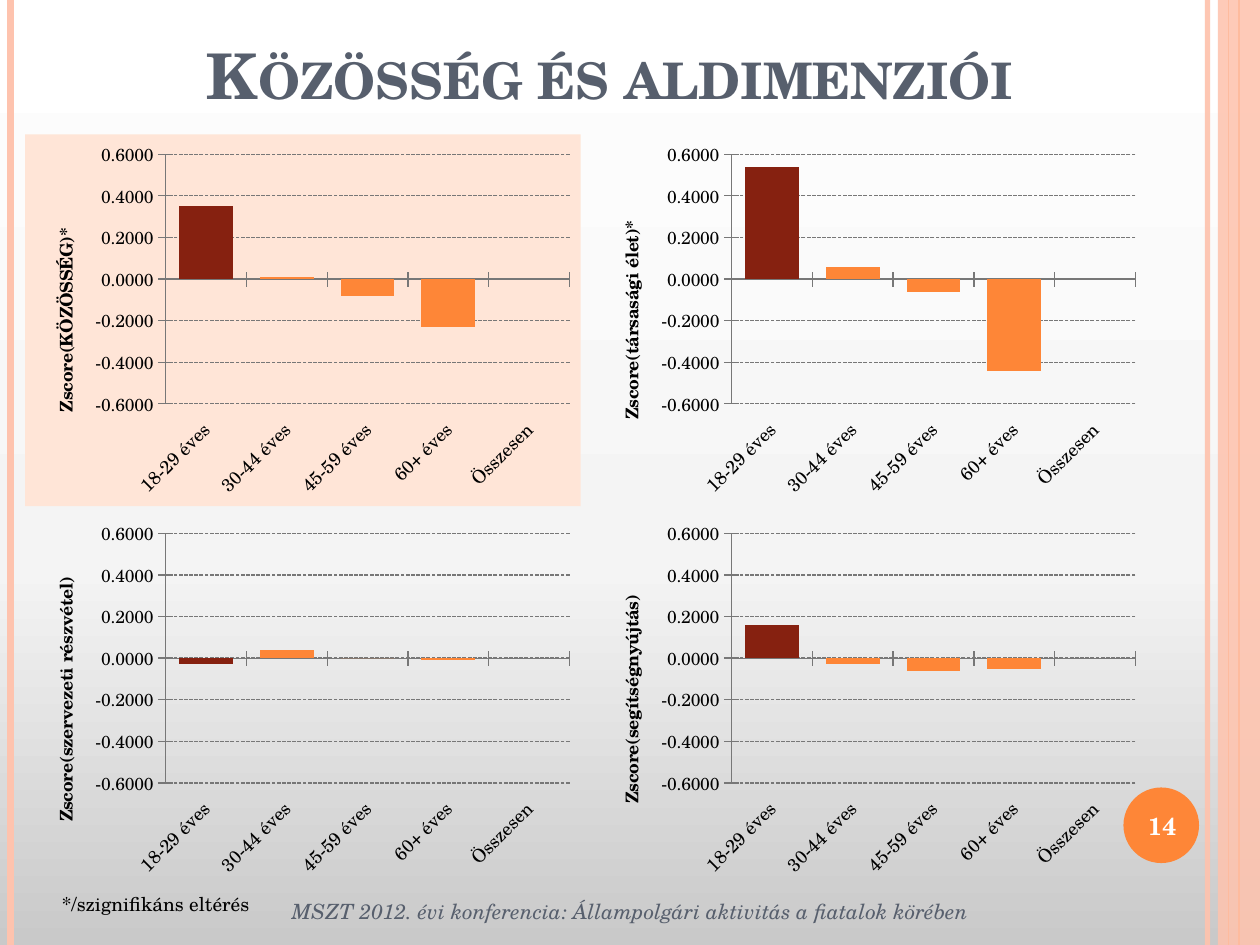
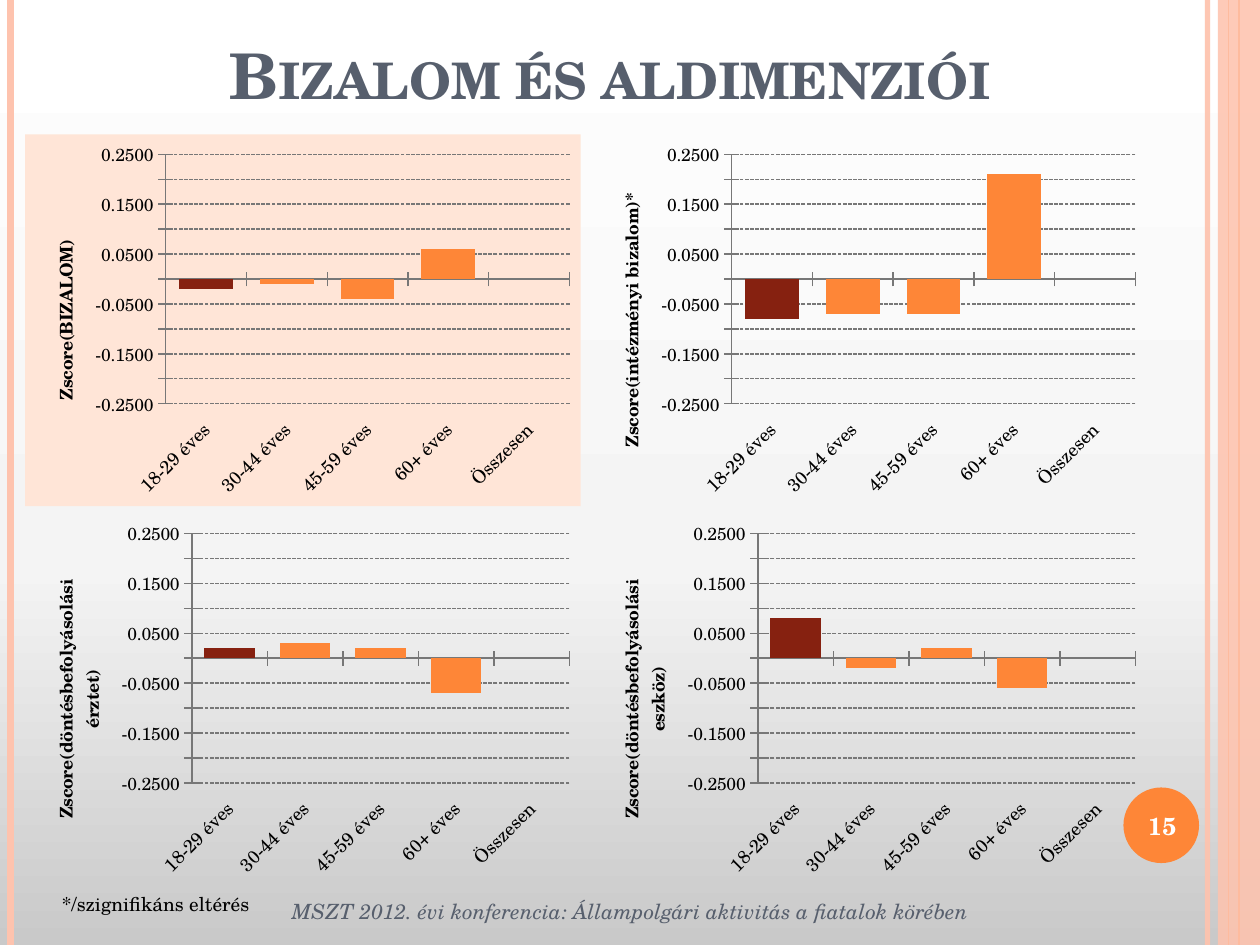
from copy import deepcopy
from dataclasses import dataclass
from itertools import product

from lxml import etree
from pptx import Presentation
from pptx import util as u
from pptx.chart.data import CategoryChartData
from pptx.dml.color import RGBColor
from pptx.enum import chart as charts
from pptx.enum import dml, shapes, text
from pptx.oxml import parse_xml
from pptx.oxml.ns import nsdecls, qn

COLORS = {
    "orange": "FE8637",
    "peach": "FEC3AE",
    "panel": "FFE5D7",
    "dark_red": "862110",
    "slate": "575F6D",
    "grid": "777777",
    "black": "000000",
    "white": "FFFFFF",
}
BACKGROUND = ((0, "C9C9C9"), (0.4, "F4F4F4"), (1, "FFFFFF"))
FONT = "TeX Gyre Schola"
COLUMNS, ROWS = 120, 90
WIDTH, HEIGHT = u.Inches(10), u.Inches(7.5)
AGES = ("18-29 éves", "30-44 éves", "45-59 éves", "60+ éves", "Összesen")
FOOTER = "MSZT 2012. évi konferencia: Állampolgári aktivitás a fiatalok körében"
FOOTNOTE = "*/szignifikáns eltérés"


@dataclass(frozen=True)
class Box:
    column: float
    row: float
    columns: float
    rows: float

    def lengths(self) -> tuple[int, int, int, int]:
        return (
            across(self.column),
            down(self.row),
            across(self.columns),
            down(self.rows),
        )


@dataclass(frozen=True)
class Stripe:
    column: float
    color: str
    points: float
    opacity: int = 100


@dataclass(frozen=True)
class ScoreChart:
    label: str
    values: tuple[float, ...]


@dataclass(frozen=True)
class Topic:
    number: int
    title: str
    limit: float
    step: float
    scores: tuple[ScoreChart, ...]


STRIPES = (
    Stripe(115, "peach", 3, 93),
    Stripe(1, "peach", 4.5),
    Stripe(118, "orange", 1.5),
    Stripe(117, "orange", 0.75),
)
SIDE_BAND = Box(116, 0, 4, ROWS)
BADGE = Box(107, 75, 7.2, 7.2)
BADGE_TEXT = Box(106.7, 75.2, 8, 6.8)
FOOTER_BOX = Box(16, 84.4, 88, 4.7)
FOOTNOTE_BOX = Box(4.7, 84.4, 20.5, 3.5)
TITLE_BOX = Box(13.1, 2.8, 90, 8.5)
FIRST_CHART = Box(2.4, 12.8, 52.9, 35.4)
CHART_STEP = (53.9, 36.1)

TOPICS = (
    Topic(14, "Közösség és aldimenziói", 0.6, 0.2, (
        ScoreChart("Zscore(KÖZÖSSÉG)*", (0.35, 0.01, -0.08, -0.23)),
        ScoreChart("Zscore(társasági élet)*", (0.54, 0.06, -0.06, -0.44)),
        ScoreChart("Zscore(szervezeti részvétel)", (-0.03, 0.04, 0, -0.01)),
        ScoreChart("Zscore(segítségnyújtás)", (0.16, -0.03, -0.06, -0.05)),
    )),
    Topic(15, "Bizalom és aldimenziói", 0.25, 0.05, (
        ScoreChart("Zscore(BIZALOM)", (-0.02, -0.01, -0.04, 0.06)),
        ScoreChart("Zscore(intézményi bizalom)*", (-0.08, -0.07, -0.07, 0.21)),
        ScoreChart("Zscore(döntésbefolyásolási érztet)", (0.02, 0.03, 0.02, -0.07)),
        ScoreChart("Zscore(döntésbefolyásolási eszköz)", (0.08, -0.02, 0.02, -0.06)),
    )),
)


def across(columns: float) -> int:
    return round(WIDTH * columns / COLUMNS)


def down(rows: float) -> int:
    return round(HEIGHT * rows / ROWS)


def rgb(name: str) -> RGBColor:
    return RGBColor.from_string(COLORS[name])


def set_opacity(element, percent: int) -> None:
    color = element.find(".//" + qn("a:srgbClr"))
    etree.SubElement(color, qn("a:alpha"), val=str(percent * 1000))


def format_font(font, size: float, color: str, bold=False, italic=False) -> None:
    font.name = FONT
    font.size = u.Pt(size)
    font.bold = bold
    font.italic = italic
    font.color.rgb = rgb(color)


def write_text(frame, content: str, *, size: float, color: str, bold=False,
               italic=False, small_caps=False, align=text.PP_ALIGN.CENTER,
               anchor=text.MSO_ANCHOR.MIDDLE, wrap=True,
               fit=text.MSO_AUTO_SIZE.NONE) -> None:
    frame.word_wrap = wrap
    frame.auto_size = fit
    frame.vertical_anchor = anchor
    paragraph = frame.paragraphs[0]
    paragraph.alignment = align
    run = paragraph.add_run()
    run.text = content
    format_font(run.font, size, color, bold, italic)
    if small_caps:
        run.font._element.set("cap", "small")


def add_text(slide, box: Box, content: str, **style) -> None:
    write_text(slide.shapes.add_textbox(*box.lengths()).text_frame, content, **style)


def paint_background(master) -> None:
    fill = master.background.fill
    fill.gradient()
    fill.gradient_angle = 90
    stops = master.element.find(".//" + qn("a:gsLst"))
    stops.append(deepcopy(stops[-1]))
    for stop, (position, color) in zip(fill.gradient_stops, BACKGROUND):
        stop.position = position
        stop.color.rgb = RGBColor.from_string(color)


def add_stripe(slide, stripe: Stripe) -> None:
    x = across(stripe.column)
    line = slide.shapes.add_connector(shapes.MSO_CONNECTOR.STRAIGHT, x, 0, x, HEIGHT)
    line.line.color.rgb = rgb(stripe.color)
    line.line.width = u.Pt(stripe.points)
    properties = line._element.spPr
    if stripe.opacity < 100:
        set_opacity(properties, stripe.opacity)
    etree.SubElement(properties, qn("a:effectLst"))


def add_filled(slide, kind, box: Box, color: str):
    shape = slide.shapes.add_shape(kind, *box.lengths())
    shape.shadow.inherit = False
    shape.fill.solid()
    shape.fill.fore_color.rgb = rgb(color)
    shape.line.fill.background()
    return shape


def add_frame(slide, number: int) -> None:
    for stripe in STRIPES:
        add_stripe(slide, stripe)
    band = add_filled(slide, shapes.MSO_SHAPE.RECTANGLE, SIDE_BAND, "peach")
    set_opacity(band._element.spPr, 87)
    add_filled(slide, shapes.MSO_SHAPE.OVAL, BADGE, "orange")
    add_text(slide, BADGE_TEXT, str(number), size=14, color="white", bold=True)
    add_text(slide, FOOTER_BOX, FOOTER, size=12, color="slate", italic=True)
    add_text(slide, FOOTNOTE_BOX, FOOTNOTE, size=11, color="black",
             align=text.PP_ALIGN.LEFT, anchor=text.MSO_ANCHOR.TOP, wrap=False,
             fit=text.MSO_AUTO_SIZE.SHAPE_TO_FIT_TEXT)


def set_title(slide, content: str) -> None:
    title = slide.shapes.title
    title.left, title.top, title.width, title.height = TITLE_BOX.lengths()
    write_text(title.text_frame, content, size=36, color="slate", bold=True,
               small_caps=True, anchor=text.MSO_ANCHOR.BOTTOM)


def fill_chart_area(chart, color: str | None) -> None:
    fill = "<a:noFill/>"
    if color:
        fill = f'<a:solidFill><a:srgbClr val="{COLORS[color]}"/></a:solidFill>'
    area = parse_xml(
        f'<c:spPr {nsdecls("c", "a")}>{fill}<a:ln><a:noFill/></a:ln></c:spPr>'
    )
    chart.element.find(qn("c:txPr")).addprevious(area)


def format_axis(axis, size: float) -> None:
    axis.major_tick_mark = charts.XL_TICK_MARK.CROSS
    axis.format.line.color.rgb = rgb("grid")
    axis.format.line.width = u.Pt(0.75)
    format_font(axis.tick_labels.font, size, "black")


def add_score_chart(slide, box: Box, score: ScoreChart, topic: Topic,
                    panel: str | None) -> None:
    data = CategoryChartData(number_format="#,##0.0000")
    data.categories = AGES
    data.add_series("Series 1", (*score.values, None))
    chart = slide.shapes.add_chart(
        charts.XL_CHART_TYPE.COLUMN_CLUSTERED, *box.lengths(), data
    ).chart
    chart.has_legend = False
    chart.has_title = False
    format_font(chart.font, 10, "black")
    fill_chart_area(chart, panel)

    plot = chart.plots[0]
    plot.gap_width = 50
    plot.vary_by_categories = False
    series = plot.series[0]
    series.invert_if_negative = False
    for target, color in ((series, "orange"), (series.points[0], "dark_red")):
        target.format.fill.solid()
        target.format.fill.fore_color.rgb = rgb(color)

    ages = chart.category_axis
    format_axis(ages, 10.5)
    ages.tick_label_position = charts.XL_TICK_LABEL_POSITION.LOW
    ages._element.find(qn("c:txPr")).find(qn("a:bodyPr")).set("rot", "-2700000")

    scale = chart.value_axis
    format_axis(scale, 10)
    scale.minimum_scale, scale.maximum_scale = -topic.limit, topic.limit
    scale.major_unit = topic.step
    scale.tick_labels.number_format = "#,##0.0000"
    scale.tick_labels.number_format_is_linked = False
    gridline = scale.major_gridlines.format.line
    gridline.color.rgb = rgb("grid")
    gridline.width = u.Pt(0.75)
    gridline.dash_style = dml.MSO_LINE.SQUARE_DOT
    run = scale.axis_title.text_frame.paragraphs[0].add_run()
    run.text = score.label
    format_font(run.font, 10, "black", bold=True)


def add_topic(presentation, topic: Topic) -> None:
    slide = presentation.slides.add_slide(presentation.slide_layouts[5])
    add_frame(slide, topic.number)
    set_title(slide, topic.title)
    for index, (row, column) in enumerate(product(range(2), repeat=2)):
        box = Box(
            FIRST_CHART.column + column * CHART_STEP[0],
            FIRST_CHART.row + row * CHART_STEP[1],
            FIRST_CHART.columns,
            FIRST_CHART.rows,
        )
        panel = "panel" if index == 0 else None
        add_score_chart(slide, box, topic.scores[index], topic, panel)


def main() -> None:
    presentation = Presentation()
    presentation.slide_width, presentation.slide_height = WIDTH, HEIGHT
    paint_background(presentation.slide_master)
    for topic in TOPICS:
        add_topic(presentation, topic)
    presentation.save("out.pptx")


if __name__ == "__main__":
    main()
